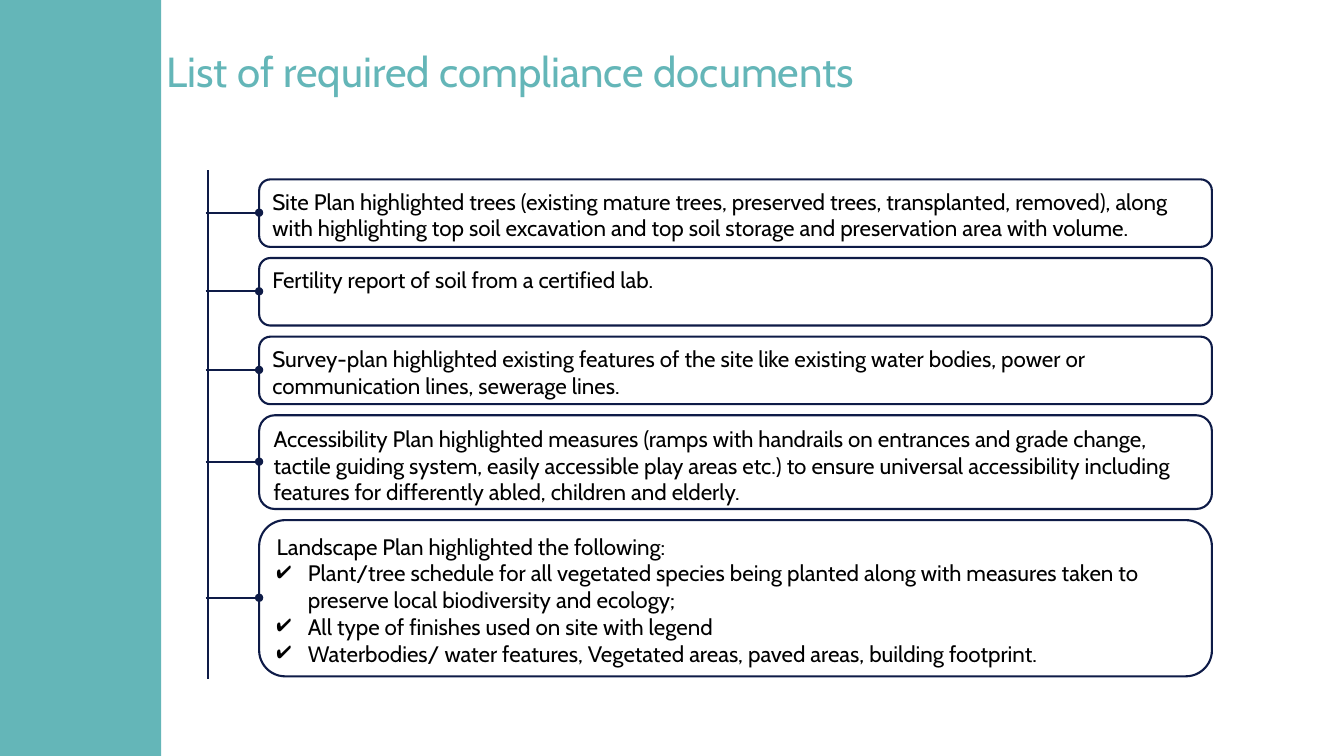
from dataclasses import dataclass

from lxml.etree import SubElement
from pptx import Presentation
from pptx.dml.color import RGBColor
from pptx.enum.shapes import MSO_CONNECTOR, MSO_SHAPE
from pptx.enum.text import MSO_ANCHOR, MSO_AUTO_SIZE, PP_ALIGN
from pptx.oxml.ns import qn
from pptx.util import Pt

PX = 9144  # 100 px to the inch


@dataclass(frozen=True)
class Theme:
    font: str = "Cabin"
    teal: str = "64B6B8"
    navy: str = "0E1B47"
    white: str = "FFFFFF"
    black: str = "000000"
    title_size: int = 30
    body_size: int = 16
    line_width: float = 1.5
    corner: float = 0.167


class Page:
    def __init__(self, deck, theme):
        self.theme = theme
        self.slide = deck.slides.add_slide(deck.slide_layouts[5])

    def add_span(self, para, text, size, colour):
        span = para.add_run()
        span.text = text
        span.font.name = self.theme.font
        span.font.size = Pt(size)
        span.font.color.rgb = RGBColor.from_string(colour)

    def frame(self, box, side, edge):
        """Set up a wrapped, top-anchored text frame with the given insets."""
        frame = box.text_frame
        frame.word_wrap = True
        frame.auto_size = MSO_AUTO_SIZE.NONE
        frame.vertical_anchor = MSO_ANCHOR.TOP
        frame.margin_left = frame.margin_right = side * PX
        frame.margin_top = frame.margin_bottom = edge * PX
        return frame

    def title(self, text, left, top, width, height):
        box = self.slide.shapes.title
        box.left, box.top, box.width, box.height = (
            length * PX for length in (left, top, width, height))
        para = self.frame(box, 5, 5).paragraphs[0]
        para.alignment = PP_ALIGN.LEFT
        self.add_span(para, text, self.theme.title_size, self.theme.teal)

    def shape(self, preset, left, top, width, height, fill):
        box = self.slide.shapes.add_shape(
            preset, left * PX, top * PX, width * PX, height * PX)
        box.shadow.inherit = False
        box.fill.solid()
        box.fill.fore_color.rgb = RGBColor.from_string(fill)
        box.line.fill.background()
        return box

    def outline(self, line):
        line.color.rgb = RGBColor.from_string(self.theme.navy)
        line.width = Pt(self.theme.line_width)

    def card(self, left, top, width, height, lead, points):
        box = self.shape(MSO_SHAPE.ROUNDED_RECTANGLE, left, top, width, height,
                         self.theme.white)
        box.adjustments[0] = self.theme.corner
        self.outline(box.line)
        frame = self.frame(box, 10, 5)
        for index, text in enumerate((lead, *points)):
            para = frame.add_paragraph() if index else frame.paragraphs[0]
            para.alignment = PP_ALIGN.LEFT
            if index:
                self.tick(para)
            self.add_span(para, text, self.theme.body_size, self.theme.black)

    def tick(self, para):
        """Give the paragraph a hanging check-mark bullet."""
        properties = para._p.get_or_add_pPr()
        properties.set("marL", str(31 * PX))
        properties.set("indent", str(-31 * PX))
        colour = SubElement(properties, qn("a:buClr"))
        SubElement(colour, qn("a:srgbClr"), val=self.theme.black)
        SubElement(properties, qn("a:buChar"), char="✔")

    def line(self, x1, y1, x2, y2, dot=False):
        connector = self.slide.shapes.add_connector(
            MSO_CONNECTOR.STRAIGHT, x1 * PX, y1 * PX, x2 * PX, y2 * PX)
        self.outline(connector.line)
        if dot:
            SubElement(connector.line._get_or_add_ln(), qn("a:tailEnd"), type="oval")
        SubElement(connector._element.spPr, qn("a:effectLst"))


DOCUMENTS = [
    (67, "Site Plan highlighted trees (existing mature trees, preserved trees, "
         "transplanted, removed), along with highlighting top soil excavation and "
         "top soil storage and preservation area with volume.", ()),
    (67, "Fertility report of soil from a certified lab.", ()),
    (67, "Survey-plan highlighted existing features of the site like existing water "
         "bodies, power or communication lines, sewerage lines.", ()),
    (93, "Accessibility Plan highlighted measures (ramps with handrails on entrances "
         "and grade change, tactile guiding system, easily accessible play areas etc.) "
         "to ensure universal accessibility including features for differently abled, "
         "children and elderly.", ()),
    (155, "Landscape Plan highlighted the following:", (
        "Plant/tree schedule for all vegetated species being planted along with "
        "measures taken to preserve local biodiversity and ecology;",
        "All type of finishes used on site with legend",
        "Waterbodies/ water features, Vegetated areas, paved areas, building footprint.",
    )),
]
CARD_LEFT, CARD_WIDTH, FIRST_TOP, GAP = 257, 945, 178, 11
TRUNK_X, BRANCH_X = 206, 204


def main():
    deck = Presentation()
    deck.slide_width, deck.slide_height = 1333 * PX, 750 * PX
    theme = Theme()
    page = Page(deck, theme)
    page.shape(MSO_SHAPE.RECTANGLE, 0, 0, 160, 750, theme.teal)
    page.title("List of required compliance documents", 160, 40, 805, 111)
    page.line(TRUNK_X, 169, TRUNK_X, 674)
    top = FIRST_TOP
    for height, lead, points in DOCUMENTS:
        page.card(CARD_LEFT, top, CARD_WIDTH, height, lead, points)
        middle = top + height // 2
        page.line(BRANCH_X, middle, CARD_LEFT, middle, dot=True)
        top += height + GAP
    deck.save("out.pptx")


if __name__ == "__main__":
    main()
